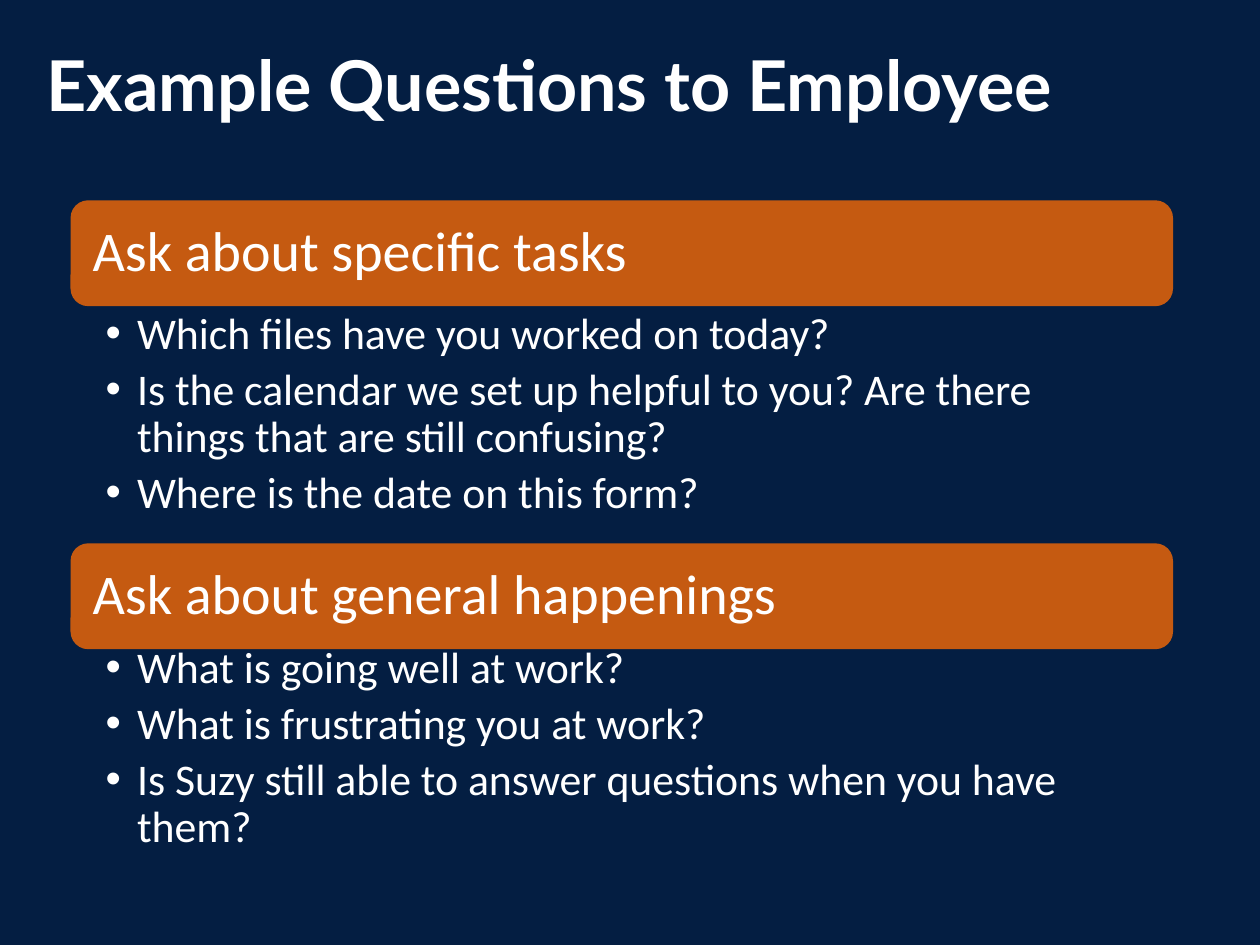
from dataclasses import dataclass

from lxml.etree import SubElement
from pptx import Presentation
from pptx.dml.color import RGBColor
from pptx.enum.shapes import MSO_SHAPE as Shape
from pptx.enum.text import MSO_ANCHOR as Anchor, MSO_AUTO_SIZE as AutoSize, PP_ALIGN as Align
from pptx.oxml.ns import qn
from pptx.util import Pt


@dataclass(frozen=True)
class Theme:
    navy: RGBColor = RGBColor(0x04, 0x1E, 0x42)
    orange: RGBColor = RGBColor(0xC5, 0x5A, 0x11)
    white: RGBColor = RGBColor(0xFF, 0xFF, 0xFF)
    title_font: str = "Lato"
    body_font: str = "Calibri"
    title_size: int = 40
    heading_size: int = 32
    question_size: int = 25


THEME = Theme()
LEFT, WIDTH = 40.3, 630
HEADING_HEIGHT, LIST_HEIGHT = 60.5, 130.3

SECTIONS = [
    (114.5, 175, "Ask about specific tasks", [
        "Which files have you worked on today?",
        "Is the calendar we set up helpful to you? Are there things that are still confusing?",
        "Where is the date on this form?",
    ]),
    (310.5, 366, "Ask about general happenings", [
        "What is going well at work?",
        "What is frustrating you at work?",
        "Is Suzy still able to answer questions when you have them?",
    ]),
]


def place(box, left, top, width, height):
    box.left, box.top, box.width, box.height = map(Pt, (left, top, width, height))


def set_frame(frame, anchor, left, top, right, bottom):
    frame.word_wrap = True
    frame.auto_size = AutoSize.NONE
    frame.vertical_anchor = anchor
    frame.margin_left, frame.margin_top = Pt(left), Pt(top)
    frame.margin_right, frame.margin_bottom = Pt(right), Pt(bottom)


def add_span(para, text, font, size, bold=False):
    para.alignment = Align.LEFT
    para.line_spacing = 0.9
    para.space_before = Pt(0)
    span = para.add_run()
    span.text = text
    span.font.name = font
    span.font.size = Pt(size)
    span.font.bold = bold
    span.font.color.rgb = THEME.white


def add_bullet(para):
    properties = para._p.get_or_add_pPr()
    properties.set("marL", str(Pt(18)))
    properties.set("indent", str(Pt(-18)))
    SubElement(properties, qn("a:buFont"), typeface="Arial")
    SubElement(properties, qn("a:buChar"), char="•")


def fill_title(box, text):
    place(box, 19.4, -1.4, 620.6, 104.4)
    set_frame(box.text_frame, Anchor.MIDDLE, 7.2, 3.6, 7.2, 3.6)
    add_span(box.text_frame.paragraphs[0], text, THEME.title_font, THEME.title_size, bold=True)


def add_heading(page, top, text):
    box = page.shapes.add_shape(
        Shape.ROUNDED_RECTANGLE, Pt(LEFT), Pt(top), Pt(WIDTH), Pt(HEADING_HEIGHT))
    box.shadow.inherit = False
    box.fill.solid()
    box.fill.fore_color.rgb = THEME.orange
    box.line.fill.background()
    set_frame(box.text_frame, Anchor.MIDDLE, 9.6, 9.6, 9.6, 9.6)
    add_span(box.text_frame.paragraphs[0], text, THEME.body_font, THEME.heading_size)


def fill_questions(box, top, questions):
    place(box, LEFT, top, WIDTH, LIST_HEIGHT)
    frame = box.text_frame
    set_frame(frame, Anchor.TOP, 20, 2.9, 18, 2.9)
    for index, question in enumerate(questions):
        para = frame.add_paragraph() if index else frame.paragraphs[0]
        para.level = 1
        add_bullet(para)
        para.space_after = Pt(5)
        add_span(para, question, THEME.body_font, THEME.question_size)


def main():
    deck = Presentation()
    deck.slide_width, deck.slide_height = Pt(720), Pt(540)
    page = deck.slides.add_slide(deck.slide_layouts.get_by_name("Two Content"))
    page.background.fill.solid()
    page.background.fill.fore_color.rgb = THEME.navy

    title, *lists = page.placeholders
    fill_title(title, "Example Questions to Employee")
    for box, (heading_top, list_top, heading, questions) in zip(lists, SECTIONS):
        add_heading(page, heading_top, heading)
        fill_questions(box, list_top, questions)
    deck.save("out.pptx")


if __name__ == "__main__":
    main()
